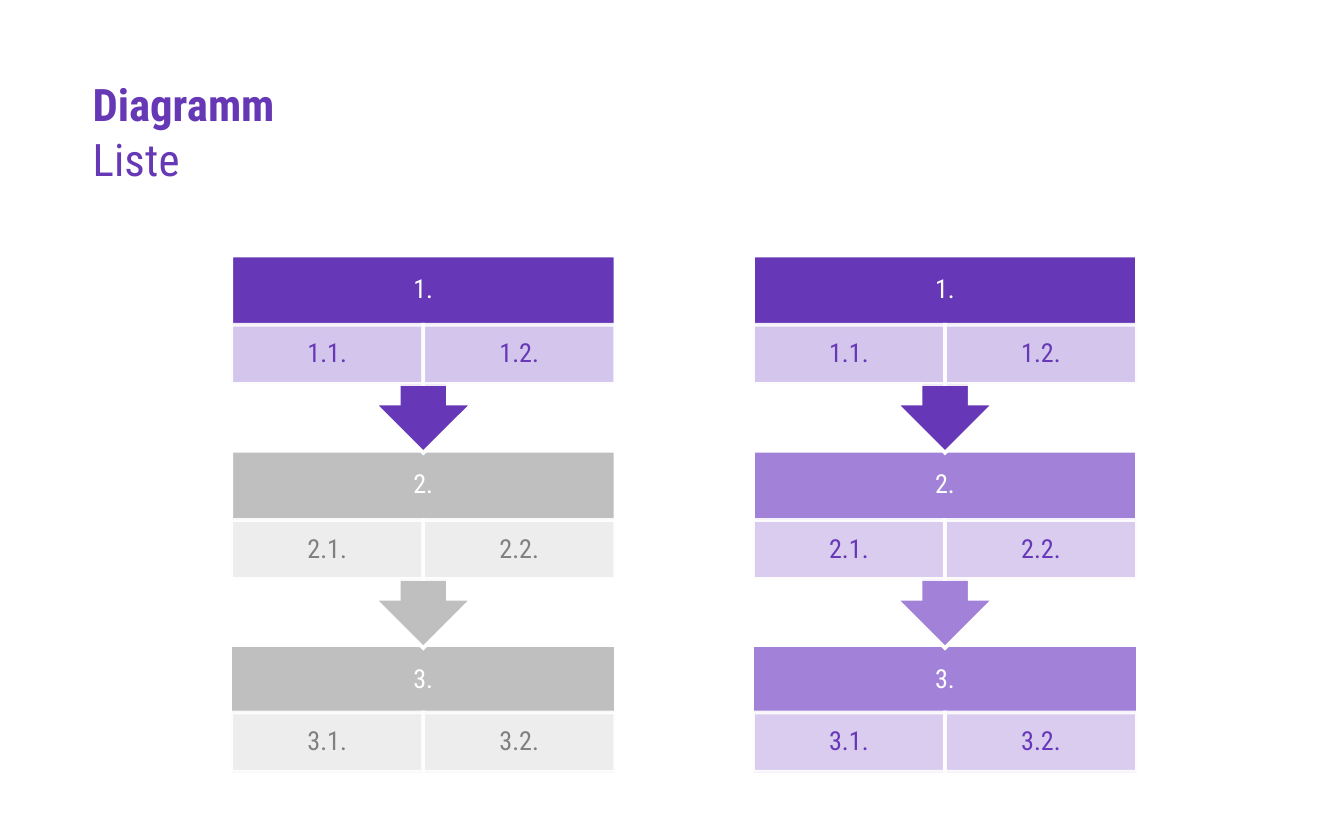
from dataclasses import dataclass

from pptx import Presentation
from pptx import util as u
from pptx.dml.color import RGBColor
from pptx.enum import shapes, text
from pptx.oxml.ns import qn
from lxml import etree


@dataclass(frozen=True)
class Theme:
    font: str = "Roboto Condensed"
    title: str = "6638B6"
    white: str = "FFFFFF"
    deep: tuple = ("6637B6", "E0D5F2", "6637B6")
    soft: tuple = ("A281D9", "E0D5F2", "6637B6")
    gray: tuple = ("BFBFBF", "F2F2F2", "808080")
    big: int = 24
    small: int = 14
    alpha: int = 90


T = Theme()
KIND = shapes.MSO_SHAPE
WIDE, TALL, STEP, TOP = 7.26, 3.73, 3.69, 4.83
LAST, CELL = 2.42, 1.12


def place(*box):
    return [u.Cm(v) for v in box]


def fade(fill):
    color = fill._xPr.find(qn("a:solidFill"))[0]
    etree.SubElement(color, qn("a:alpha"), val=str(T.alpha * 1000))


def write(shape, words, size, color, pad=(0, 0), bold=False, center=False,
          lead=0.9, track=0):
    frame = shape.text_frame
    frame.word_wrap = True
    frame.margin_left = frame.margin_right = u.Cm(pad[0])
    frame.margin_top = frame.margin_bottom = u.Cm(pad[1])
    frame.vertical_anchor = (
        text.MSO_ANCHOR.MIDDLE if center else text.MSO_ANCHOR.TOP)
    para = frame.paragraphs[0]
    para.alignment = text.PP_ALIGN.CENTER if center else text.PP_ALIGN.LEFT
    para.line_spacing = lead
    run = para.add_run()
    run.text = words
    font = run.font
    font.name, font.size, font.bold = T.font, u.Pt(size), bold
    font.color.rgb = RGBColor.from_string(color)
    if track:
        font._element.set("spc", str(track))


def block(parent, kind, box, fill, width=2):
    shape = parent.add_shape(kind, *place(*box))
    shape.shadow.inherit = False
    shape.fill.solid()
    shape.fill.fore_color.rgb = RGBColor.from_string(fill)
    shape.line.color.rgb = RGBColor.from_string(T.white)
    shape.line.width = u.Pt(width)
    line = shape.line.fill._xPr
    etree.SubElement(line, qn("a:miter"), lim="800000")
    return shape


def cell(parent, box, words, fill, ink):
    shape = block(parent, KIND.RECTANGLE, box, fill)
    fade(shape.fill)
    fade(shape.line.fill)
    write(shape, words, T.small, ink, (0.28, 0.05), center=True)


def stage(parent, left, index, tones, last):
    top = TOP + index * STEP
    main, pale, ink = tones
    if last:
        block(parent, KIND.RECTANGLE, (left, top, WIDE, LAST), main, 1)
    else:
        arrow = block(parent, KIND.UP_ARROW_CALLOUT,
                      (left, top, WIDE, TALL), main)
        arrow.rotation = 180
    head = parent.add_textbox(*place(left, top, WIDE, 1.3))
    write(head, f"{index + 1}.", T.small, T.white, (0.28, 0.28), center=True)
    drop = 1.26 if last else 1.31
    half = WIDE / 2
    for col in range(2):
        cell(parent, (left + col * half, top + drop, half, CELL),
             f"{index + 1}.{col + 1}.", pale, ink)


def chain(slide, left, tones):
    group = slide.shapes.add_group_shape().shapes
    end = len(tones) - 1
    for index in range(end, -1, -1):
        stage(group, left, index, tones[index], index == end)


def label(slide, box, words, **style):
    shape = slide.shapes.add_textbox(*place(*box))
    write(shape, words, T.big, T.title, **style)


def main():
    deck = Presentation()
    deck.slide_width, deck.slide_height = place(25.4, 15.88)
    slide = deck.slides.add_slide(deck.slide_layouts[6])
    chain(slide, 14.23, (T.deep, T.soft, T.soft))
    label(slide, (1.75, 1.57, 21.9, 0.81), "Diagramm", bold=True)
    label(slide, (1.75, 2.39, 21.9, 0.91), "Liste", lead=1.1, track=10)
    chain(slide, 4.37, (T.deep, T.gray, T.gray))
    deck.save("out.pptx")


if __name__ == "__main__":
    main()
